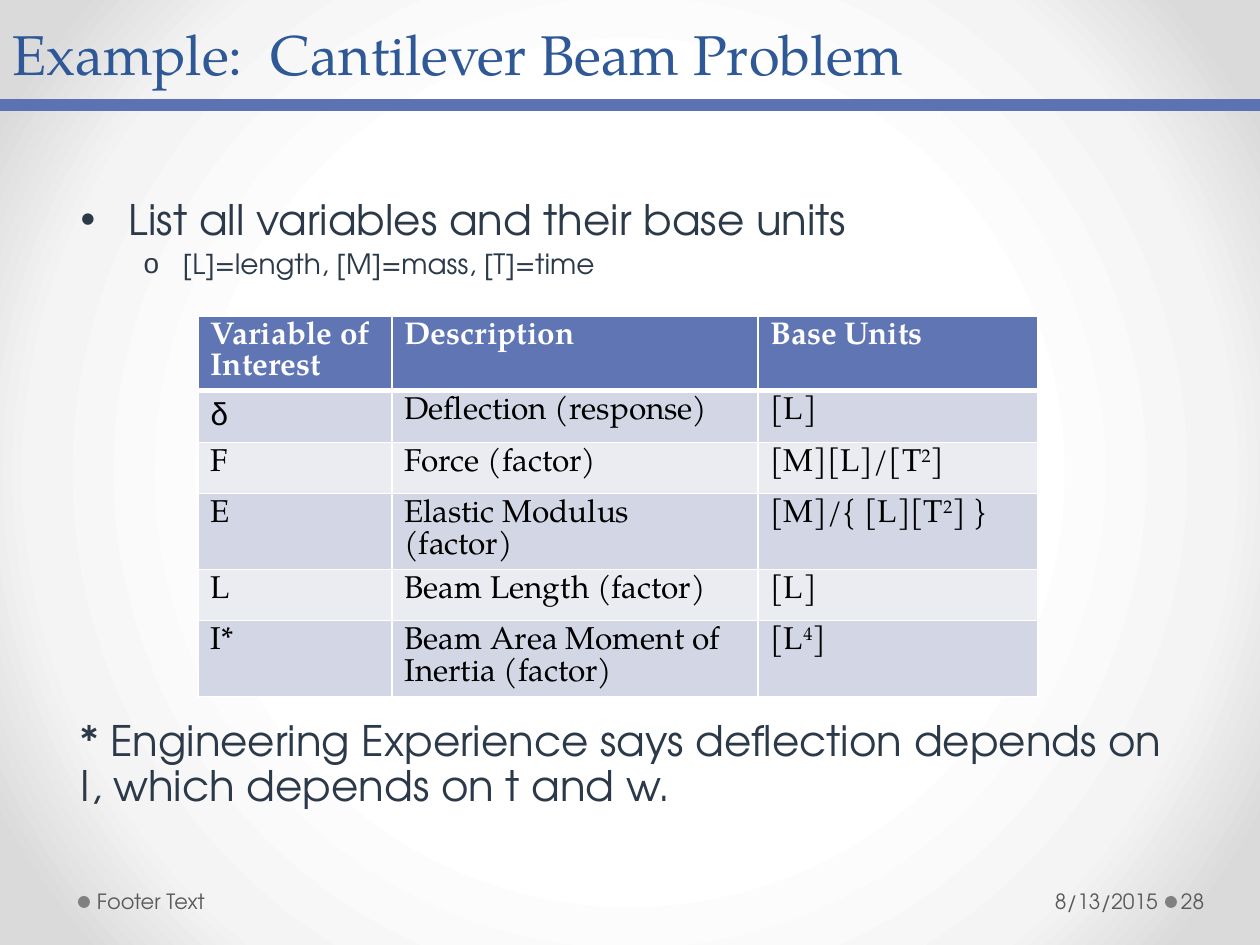
"""Build the cantilever beam slide that lists variables and their base units."""
import pptx
import pptx.dml.color
import pptx.enum.shapes
import pptx.enum.text
import pptx.oxml
import pptx.oxml.ns
import pptx.util

THEME = {
    "title": {"name": "TeX Gyre Pagella", "size": 32, "color": "2F5897"},
    "body": {"name": "TeX Gyre Adventor", "size": 24, "color": "2B3949"},
    "detail": {"name": "TeX Gyre Adventor", "size": 16, "color": "2B3949"},
    "footer": {"name": "TeX Gyre Adventor", "size": 12, "color": "595959"},
    "header": {"name": "TeX Gyre Pagella", "size": 18, "color": "FFFFFF", "bold": True},
    "cell": {"name": "TeX Gyre Pagella", "size": 18, "color": "000000", "bold": False},
    "symbol": {"name": "Arial", "size": 18, "color": "000000", "bold": False},
    "rule": "5C72B2",
    "dot": "808080",
    "border": "FFFFFF",
    "header_fill": "6076B4",
    "bands": ("D2D6E5", "EAECF2"),
    "background": ((50, "FFFFFF"), (76, "F4F4F4"), (92, "DADADA")),
}

TITLE = "Example:  Cantilever Beam Problem"
BODY = [
    {"text": "List all variables and their base units", "format": "body",
     "level": 0, "margin": 48, "hanging": 48, "bullet": "•", "before": 0},
    {"text": "[L]=length, [M]=mass, [T]=time", "format": "detail",
     "level": 1, "margin": 102, "hanging": 39, "bullet": "o", "before": 3.2},
    {"text": "* Engineering Experience says deflection depends on I, which depends on t and w.",
     "format": "body", "level": 0, "margin": 0, "hanging": 0, "bullet": None, "before": 251},
]
HEADERS = ("Variable of Interest", "Description", "Base Units")
VARIABLES = [
    ("δ", "Deflection (response)", "[L]"),
    ("F", "Force (factor)", "[M][L]/[T^2^]"),
    ("E", "Elastic Modulus (factor)", "[M]/{ [L][T^2^] }"),
    ("L", "Beam Length (factor)", "[L]"),
    ("I*", "Beam Area Moment of Inertia (factor)", "[L^4^]"),
]
COLUMN_WIDTHS = (194, 366, 280)
ROW_HEIGHTS = (73, 52, 51, 76, 51, 76)
FOOTERS = [
    ("8/13/2015", (877, 876, 287, 50), (13, 6), "RIGHT"),
    ("Footer Text", (91, 876, 392, 50), (6, 13), "LEFT"),
    ("28", (1177, 876, 77, 50), (4, 6), "LEFT"),
]
DOT_LEFTS = (1165, 78)


def px(length):
    return pptx.util.Emu(round(length * 914400 / 126))


def box(*lengths):
    return [px(length) for length in lengths]


def rgb(value):
    return pptx.dml.color.RGBColor.from_string(value)


def xml(markup):
    namespaces = pptx.oxml.ns.nsdecls("a", "p")
    tag, rest = markup[1:].split(">", 1)
    closing = "/" if tag.endswith("/") else ""
    return pptx.oxml.parse_xml(f"<{tag.rstrip('/')} {namespaces}{closing}>{rest}")


def style_font(font, style):
    values = {**THEME[style], "size": pptx.util.Pt(THEME[style]["size"])}
    font.color.rgb = rgb(values.pop("color"))
    for name, value in values.items():
        setattr(font, name, value)


def add_background(slide):
    stops = "".join(f'<a:gs pos="{position * 1000}"><a:srgbClr val="{color}"/></a:gs>'
                    for position, color in THEME["background"])
    slide.element.cSld.insert(0, xml(
        f'<p:bg><p:bgPr><a:gradFill rotWithShape="1"><a:gsLst>{stops}</a:gsLst>'
        '<a:path path="circle"><a:fillToRect l="50000" t="50000" r="50000" b="50000"/></a:path>'
        '</a:gradFill><a:effectLst/></p:bgPr></p:bg>'))


def add_decoration(slide):
    for left in DOT_LEFTS:
        dot = slide.shapes.add_shape(pptx.enum.shapes.MSO_SHAPE.OVAL, *box(left, 896, 12, 12))
        dot.shadow.inherit = False
        dot.fill.solid()
        dot.fill.fore_color.rgb = rgb(THEME["dot"])
        dot.line.fill.background()
    rule = slide.shapes.add_connector(
        pptx.enum.shapes.MSO_CONNECTOR.STRAIGHT, *box(0, 105, 1260, 105))
    rule.line.color.rgb = rgb(THEME["rule"])
    rule.line.width = pptx.util.Pt(6.75)
    rule.element.spPr.append(xml("<a:effectLst/>"))


def place(shape, *lengths):
    for name, value in zip(("left", "top", "width", "height"), box(*lengths)):
        setattr(shape, name, value)


def set_frame(frame, anchor):
    values = {"word_wrap": True, "auto_size": pptx.enum.text.MSO_AUTO_SIZE.NONE,
              "vertical_anchor": anchor}
    for name, value in values.items():
        setattr(frame, name, value)


def fill_title(title):
    place(title, 0, -23, 1249, 116)
    set_frame(title.text_frame, pptx.enum.text.MSO_ANCHOR.BOTTOM)
    title.text_frame.text = TITLE
    paragraph = title.text_frame.paragraphs[0]
    paragraph.alignment = pptx.enum.text.PP_ALIGN.LEFT
    paragraph.line_spacing = pptx.util.Pt(58)
    style_font(paragraph.runs[0].font, "title")


def fill_body(body):
    place(body, 68, 193, 1134, 728)
    frame = body.text_frame
    set_frame(frame, pptx.enum.text.MSO_ANCHOR.TOP)
    frame.text = "\n".join(item["text"] for item in BODY)
    for paragraph, item in zip(frame.paragraphs, BODY):
        values = {"level": item["level"], "line_spacing": 0.9,
                  "space_before": pptx.util.Pt(item["before"])}
        for name, value in values.items():
            setattr(paragraph, name, value)
        properties = paragraph._p.get_or_add_pPr()
        properties.set("marL", str(px(item["margin"])))
        properties.set("indent", str(-px(item["hanging"])))
        bullet = item["bullet"]
        properties.append(xml(f'<a:buChar char="{bullet}"/>' if bullet else "<a:buNone/>"))
        style_font(paragraph.runs[0].font, item["format"])


def add_footers(slide):
    for text, lengths, margins, alignment in FOOTERS:
        frame = slide.shapes.add_textbox(*box(*lengths)).text_frame
        set_frame(frame, pptx.enum.text.MSO_ANCHOR.MIDDLE)
        frame.margin_left, frame.margin_right = box(*margins)
        frame.text = text
        paragraph = frame.paragraphs[0]
        paragraph.alignment = getattr(pptx.enum.text.PP_ALIGN, alignment)
        style_font(paragraph.runs[0].font, "footer")


def fill_cell(cell, text, style, fill, top, bottom):
    paragraph = cell.text_frame.paragraphs[0]
    for index, part in enumerate(text.split("^")):
        run = paragraph.add_run()
        run.text = part
        style_font(run.font, style)
        if index % 2:
            run.font._element.set("baseline", "30000")
    properties = cell._tc.get_or_add_tcPr()
    for side, points in (("L", 1), ("R", 1), ("T", top), ("B", bottom)):
        properties.append(xml(
            f'<a:ln{side} w="{pptx.util.Pt(points)}"><a:solidFill>'
            f'<a:srgbClr val="{THEME["border"]}"/></a:solidFill></a:ln{side}>'))
    cell.fill.solid()
    cell.fill.fore_color.rgb = rgb(fill)


def add_variable_table(slide):
    rows = [HEADERS, *VARIABLES]
    table = slide.shapes.add_table(
        len(rows), len(HEADERS), *box(198, 316, sum(COLUMN_WIDTHS), sum(ROW_HEIGHTS))).table
    for column, width in zip(table.columns, COLUMN_WIDTHS):
        column.width = px(width)
    for index, (row, height, texts) in enumerate(zip(table.rows, ROW_HEIGHTS, rows)):
        row.height = px(height)
        fill = THEME["bands"][(index - 1) % 2] if index else THEME["header_fill"]
        for cell, text in zip(row.cells, texts):
            style = "header" if index == 0 else "symbol" if text == "δ" else "cell"
            fill_cell(cell, text, style, fill, 3 if index == 1 else 1, 3 if index == 0 else 1)


def main():
    presentation = pptx.Presentation()
    presentation.slide_width, presentation.slide_height = box(1260, 945)
    slide = presentation.slides.add_slide(presentation.slide_layouts[1])
    add_background(slide)
    add_decoration(slide)
    fill_title(slide.shapes.title)
    fill_body(slide.placeholders[1])
    add_footers(slide)
    add_variable_table(slide)
    presentation.save("out.pptx")


if __name__ == "__main__":
    main()
